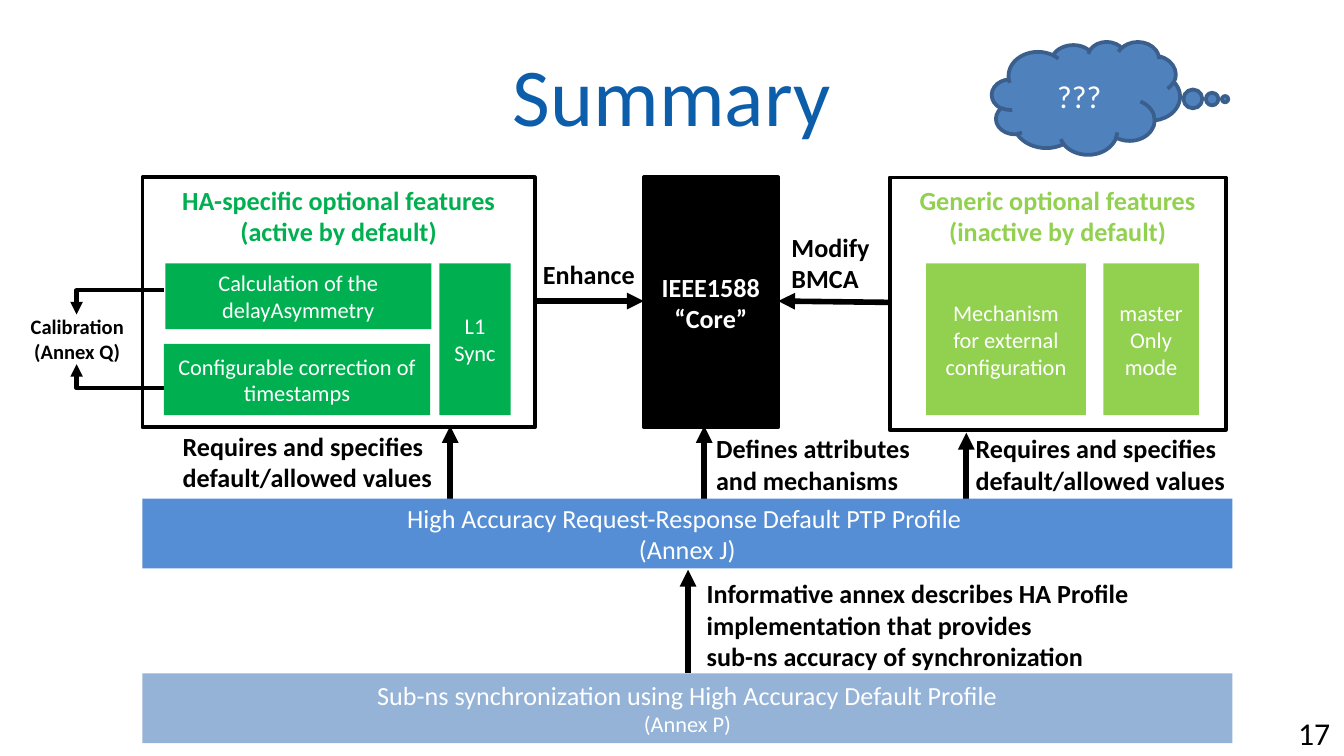
from lxml.etree import SubElement
from pptx import Presentation
from pptx.dml.color import RGBColor
from pptx.enum.shapes import MSO_CONNECTOR as LINK, MSO_SHAPE as SHAPE
from pptx.enum.text import MSO_ANCHOR as ANCHOR, MSO_AUTO_SIZE as FIT, PP_ALIGN as ALIGN
from pptx.oxml.ns import qn
from pptx.util import Pt

PX = 9144  # 100 px to the inch

BLACK = RGBColor(0x00, 0x00, 0x00)
WHITE = RGBColor(0xFF, 0xFF, 0xFF)
TITLE_BLUE = RGBColor(0x0D, 0x5E, 0xAA)
GREEN = RGBColor(0x00, 0xB0, 0x50)
LIME = RGBColor(0x92, 0xD0, 0x50)
PROFILE_BLUE = RGBColor(0x55, 0x8E, 0xD5)
ANNEX_BLUE = RGBColor(0x95, 0xB3, 0xD7)
CLOUD_BLUE = RGBColor(0x4F, 0x81, 0xBD)
CLOUD_EDGE = RGBColor(0x3A, 0x5F, 0x8C)


def write(shape, lines, size, color, bold=False, align=ALIGN.CENTER, anchor=ANCHOR.MIDDLE):
    frame = shape.text_frame
    frame.text = "\n".join(lines)
    frame.vertical_anchor = anchor
    for paragraph in frame.paragraphs:
        paragraph.alignment = align
        font = paragraph.runs[0].font
        for name, value in {"name": "Calibri", "size": Pt(size), "bold": bold}.items():
            setattr(font, name, value)
        font.color.rgb = color
    return frame


def add_block(kind, box, fill, edge=None):
    block = slide.shapes.add_shape(kind, *(v * PX for v in box))
    block.shadow.inherit = False
    block.fill.solid()
    block.fill.fore_color.rgb = fill
    if edge is None:
        block.line.fill.background()
    else:
        block.line.color.rgb = edge
        block.line.width = Pt(2)
    return block


# 16:9 slide
deck = Presentation()
deck.slide_width = 1000 * PX
deck.slide_height = deck.slide_width * 9 // 16
slide = deck.slides.add_slide(deck.slide_layouts[5])

# Title
title = slide.shapes.title
title.left, title.top, title.width, title.height = (v * PX for v in (50, 23, 900, 94))
write(title, ["Summary"], 44, TITLE_BLUE)

# Outlined feature panels
panels = [
    ((662, 132, 250, 188), LIME, ["Generic optional features", "(inactive by default)"]),
    ((106, 132, 292, 186), GREEN, ["HA-specific optional features", "(active by default)"]),
]
for box, color, lines in panels:
    panel = add_block(SHAPE.RECTANGLE, box, WHITE, BLACK)
    write(panel, lines, 14, color, bold=True, anchor=ANCHOR.TOP)

# Arrows: start, end, width, kind
arrows = [
    ((335, 374), (335, 317), 3, LINK.STRAIGHT),
    ((524, 371), (524, 317), 3, LINK.STRAIGHT),
    ((719, 374), (719, 322), 3, LINK.STRAIGHT),
    ((512, 501), (512, 424), 3, LINK.STRAIGHT),
    ((398, 224), (479, 224), 3, LINK.STRAIGHT),
    ((663, 225), (579, 224), 3, LINK.STRAIGHT),
    ((122, 216), (57, 234), 2.25, LINK.ELBOW),
    ((122, 289), (57, 271), 2.25, LINK.ELBOW),
]
for start, end, width, kind in arrows:
    arrow = slide.shapes.add_connector(kind, *(v * PX for v in start + end))
    arrow.line.color.rgb = BLACK
    arrow.line.width = Pt(width)
    SubElement(arrow.line._get_or_add_ln(), qn("a:tailEnd"), type="triangle")
    properties = arrow._element.spPr
    SubElement(properties, qn("a:effectLst"))
    if kind == LINK.ELBOW:  # a single bend
        properties.find(qn("a:prstGeom")).set("prst", "bentConnector2")

# Core
core = add_block(SHAPE.RECTANGLE, (479, 132, 100, 186), BLACK, BLACK)
write(core, ["IEEE1588", "“Core”"], 14, WHITE, bold=True)

# Feature blocks inside the panels
features = [
    ((689, 196, 119, 113), LIME, ["Mechanism for external configuration"]),
    ((821, 196, 71, 113), LIME, ["master Only", "mode"]),
    ((327, 196, 53, 113), GREEN, ["L1 Sync"]),
    ((122, 256, 198, 53), GREEN, ["Configurable correction of timestamps"]),
    ((123, 196, 198, 49), GREEN, ["Calculation of the delayAsymmetry"]),
]
for box, color, lines in features:
    write(add_block(SHAPE.RECTANGLE, box, color), lines, 12, WHITE)

# Profile bars
profile = add_block(SHAPE.RECTANGLE, (106, 371, 811, 52), PROFILE_BLUE)
write(profile, ["High Accuracy Request-Response Default PTP Profile ", "(Annex J)"], 14, WHITE)
annex = add_block(SHAPE.RECTANGLE, (106, 501, 811, 52), ANNEX_BLUE)
annex_text = write(
    annex, ["Sub-ns synchronization using High Accuracy Default Profile", "(Annex P)"], 14, WHITE)
annex_text.paragraphs[1].runs[0].font.size = Pt(12)

# Labels and page number
requirement = ["Requires and specifies", "default/allowed values"]
labels = [
    ((516, 425, 376, 81), 14, True, ["Informative annex describes HA Profile",
                                     "implementation that provides",
                                     "sub-ns accuracy of synchronization"]),
    ((523, 317, 166, 74), 14, True, ["Defines attributes", "and mechanisms"]),
    ((126, 315, 209, 57), 14, True, requirement),
    ((716, 317, 209, 57), 14, True, requirement),
    ((394, 187, 89, 34), 14, True, ["Enhance"]),
    ((579, 167, 79, 57), 14, True, ["Modify", "BMCA"]),
    ((956, 526, 44, 39), 17, False, ["17"]),
]
for box, size, bold, lines in labels:
    label = slide.shapes.add_textbox(*(v * PX for v in box))
    frame = write(label, lines, size, BLACK, bold, ALIGN.LEFT, ANCHOR.TOP)
    frame.word_wrap = len(lines) == 3
    frame.auto_size = FIT.SHAPE_TO_FIT_TEXT

calibration = slide.shapes.add_textbox(*(v * PX for v in (12, 234, 91, 37)))
frame = write(calibration, ["Calibration", "(Annex Q)"], 11, BLACK, bold=True, anchor=ANCHOR.TOP)
frame.margin_top = frame.margin_bottom = 0
frame.word_wrap = False
frame.auto_size = FIT.SHAPE_TO_FIT_TEXT

# Question cloud
cloud = add_block(SHAPE.CLOUD_CALLOUT, (738, 31, 140, 84), CLOUD_BLUE, CLOUD_EDGE)
cloud.adjustments[0], cloud.adjustments[1] = 0.74, 0.01
write(cloud, ["???"], 17, WHITE)

deck.save("out.pptx")
